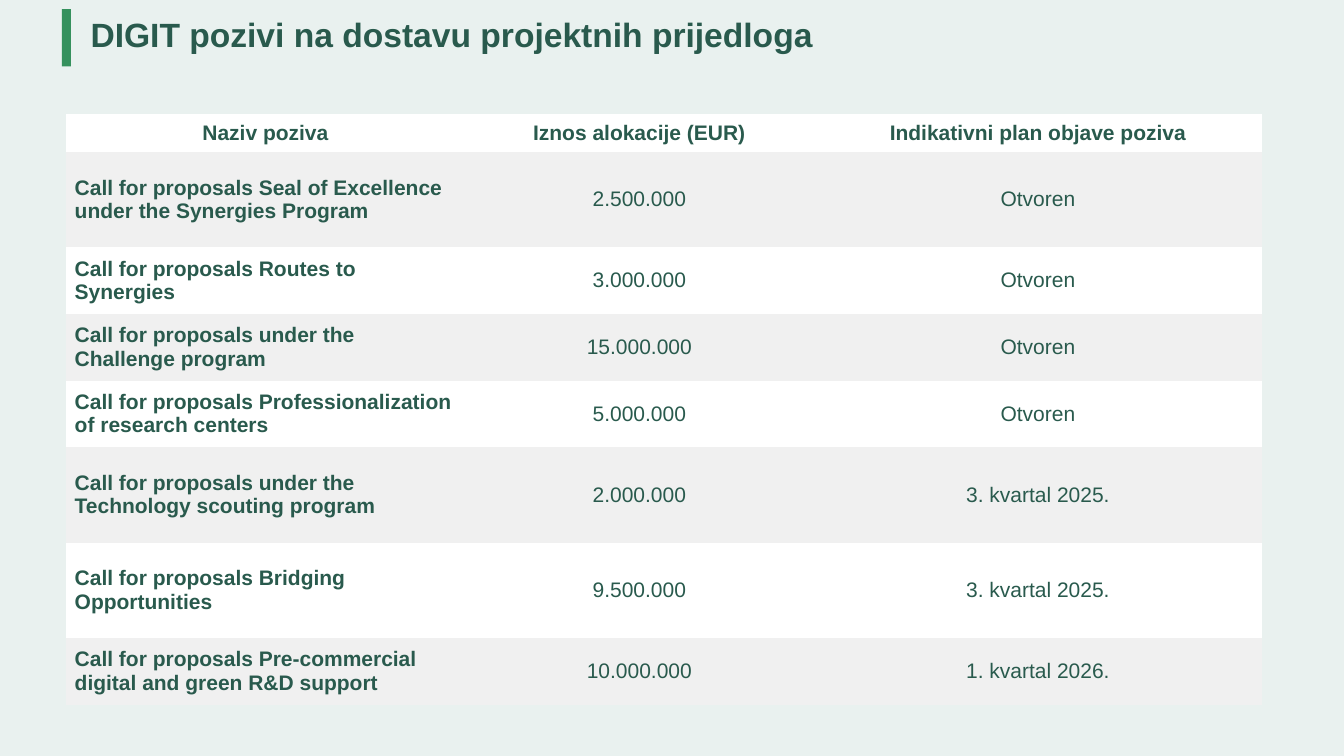
from pptx import Presentation
from pptx.dml.color import RGBColor
from pptx.enum.shapes import MSO_SHAPE
from pptx.enum.text import MSO_ANCHOR, PP_ALIGN
from pptx.oxml.ns import qn
from pptx.util import Pt

RECT = MSO_SHAPE.RECTANGLE
TOP, MIDDLE = MSO_ANCHOR.TOP, MSO_ANCHOR.MIDDLE
LEFT, CENTER = PP_ALIGN.LEFT, PP_ALIGN.CENTER

THEME = {
    "font": "Arial",
    "back": RGBColor.from_string("E9F1EF"),
    "text": RGBColor.from_string("295A4D"),
    "bar": RGBColor.from_string("35915D"),
    "bands": [RGBColor.from_string("FFFFFF"), RGBColor.from_string("F0F0F0")],
    "title": Pt(24),
    "body": Pt(15),
}
NO_STYLE = "{2D5ABB26-0587-4C30-8999-92F81FD0307C}"

HEAD = ("Naziv poziva", "Iznos alokacije (EUR)", "Indikativni plan objave poziva")
CALLS = [
    ("Call for proposals Seal of Excellence under the Synergies Program", "2.500.000", "Otvoren"),
    ("Call for proposals Routes to Synergies", "3.000.000", "Otvoren"),
    ("Call for proposals under the Challenge program", "15.000.000", "Otvoren"),
    ("Call for proposals Professionalization of research centers", "5.000.000", "Otvoren"),
    ("Call for proposals under the Technology scouting program", "2.000.000", "3. kvartal 2025."),
    ("Call for proposals Bridging Opportunities", "9.500.000", "3. kvartal 2025."),
    ("Call for proposals Pre-commercial digital and green R&D support", "10.000.000", "1. kvartal 2026."),
]
WIDTHS = [284.4, 249.8, 319.7]
SLIM, LOW, TALL = 27.2, 47.6, 68.1
HEIGHTS = [SLIM, TALL, LOW, LOW, LOW, TALL, TALL, LOW]


def write(frame, text, size, bold, align):
    para = frame.paragraphs[0]
    para.alignment = align
    run = para.add_run()
    run.text = text
    look = {"name": THEME["font"], "size": size, "bold": bold}
    for key, value in look.items():
        setattr(run.font, key, value)
    run.font.color.rgb = THEME["text"]


# Slide
deck = Presentation()
deck.slide_width, deck.slide_height = Pt(960), Pt(540)
slide = deck.slides.add_slide(deck.slide_layouts[6])
slide.background.fill.solid()
slide.background.fill.fore_color.rgb = THEME["back"]

# Title with its accent bar
title = slide.shapes.add_textbox(Pt(57.6), Pt(6.5), Pt(917.3), Pt(110.2))
title.text_frame.word_wrap = True
title.text_frame.vertical_anchor = TOP
write(title.text_frame, "DIGIT pozivi na dostavu projektnih prijedloga",
      THEME["title"], True, LEFT)

bar = slide.shapes.add_shape(RECT, Pt(44.2), Pt(6.5), Pt(6.5), Pt(41))
bar.shadow.inherit = False
bar.fill.solid()
bar.fill.fore_color.rgb = THEME["bar"]
bar.line.fill.background()

# Table of calls
rows = [HEAD] + CALLS
grid = slide.shapes.add_table(len(rows), len(HEAD), Pt(47.4), Pt(81.4),
                              Pt(sum(WIDTHS)), Pt(sum(HEIGHTS))).table
grid.horz_banding = False
grid._tbl.tblPr.find(qn("a:tableStyleId")).text = NO_STYLE
for col, width in zip(grid.columns, WIDTHS):
    col.width = Pt(width)

pads = {
    "margin_left": Pt(6), "margin_right": Pt(6),
    "margin_top": Pt(3), "margin_bottom": Pt(3),
    "vertical_anchor": MIDDLE,
}
for r, row in enumerate(rows):
    grid.rows[r].height = Pt(HEIGHTS[r])
    for c, text in enumerate(row):
        cell = grid.cell(r, c)
        for key, value in pads.items():
            setattr(cell, key, value)
        cell.fill.solid()
        cell.fill.fore_color.rgb = THEME["bands"][r % 2]
        align = LEFT if r and c == 0 else CENTER
        write(cell.text_frame, text, THEME["body"], r == 0 or c == 0, align)

deck.save("out.pptx")
